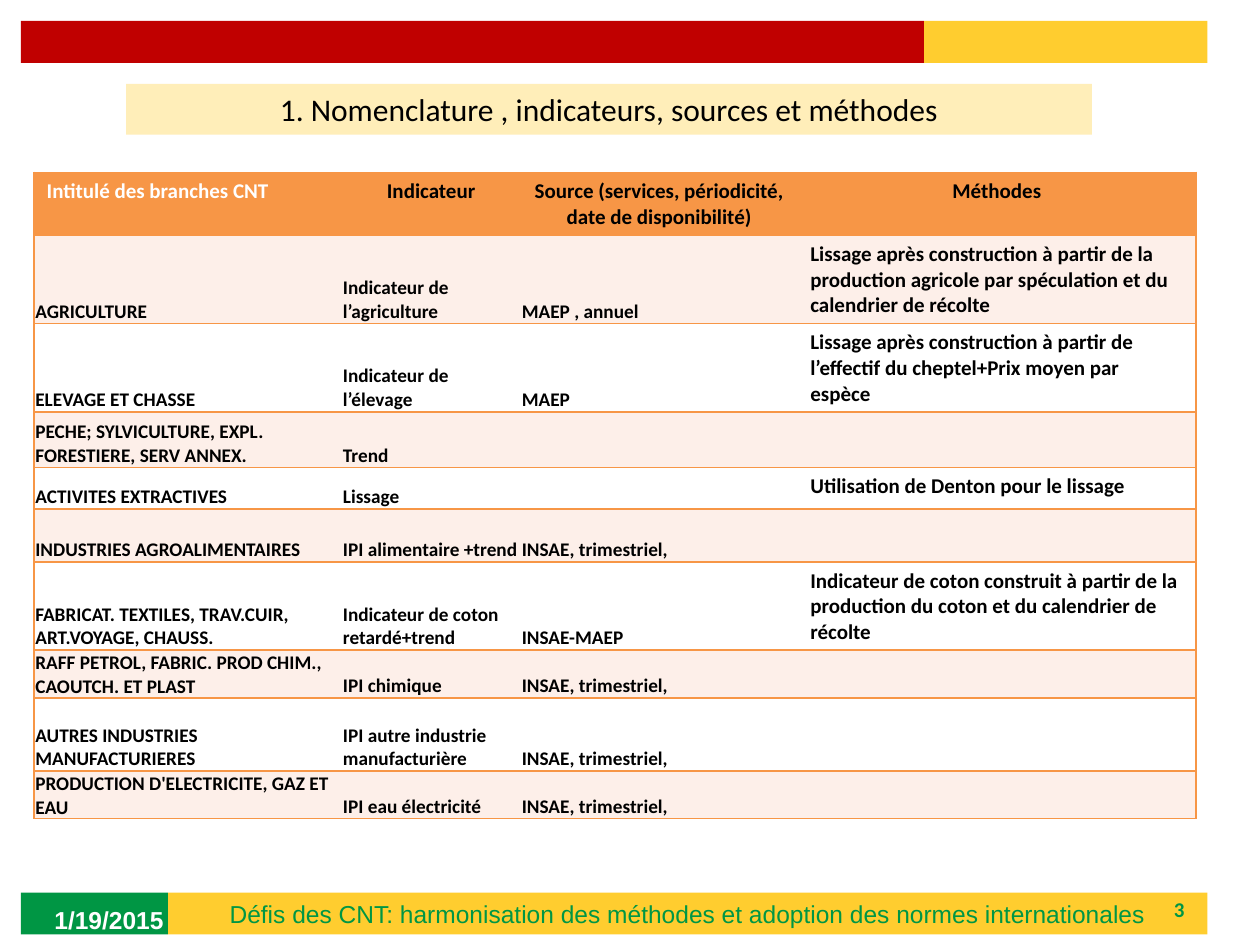
from lxml import etree
from pptx import Presentation
from pptx.dml.color import RGBColor
from pptx.enum.shapes import MSO_SHAPE
from pptx.enum.text import MSO_ANCHOR, PP_ALIGN
from pptx.oxml.ns import qn
from pptx.util import Pt

RECT = MSO_SHAPE.RECTANGLE
LEFT, MID, RIGHT = PP_ALIGN.LEFT, PP_ALIGN.CENTER, PP_ALIGN.RIGHT
TOP, CENTER, BASE = MSO_ANCHOR.TOP, MSO_ANCHOR.MIDDLE, MSO_ANCHOR.BOTTOM
PLAIN = "{2D5ABB26-0587-4C30-8999-92F81FD0307C}"

COLORS = {
    "green": "009644", "gold": "FFCD2F", "red": "C00000", "cream": "FFEEB9",
    "orange": "F79646", "pink": "FDEFE9", "white": "FFFFFF", "black": "000000",
}
TITLE = "1. Nomenclature , indicateurs, sources et méthodes"
MOTTO = "Défis des CNT: harmonisation des méthodes et adoption des normes internationales"
DATE = "1/19/2015"
PAGE = "3"
BARS = [
    ("green", 12, 510, 84, 24),
    ("gold", 96, 510, 594, 24),
    ("red", 12, 12, 516, 24),
    ("gold", 528, 12, 162, 24),
]
HEAD = [
    "Intitulé des branches CNT",
    "Indicateur",
    "Source (services, périodicité, date de disponibilité)",
    "Méthodes",
]
BODY = [
    ("AGRICULTURE", "Indicateur de l’agriculture", "MAEP , annuel",
     "Lissage après construction à partir de la production agricole par spéculation et du calendrier de récolte"),
    ("ELEVAGE ET CHASSE", "Indicateur de l’élevage", "MAEP",
     "Lissage après construction à partir de l’effectif du cheptel+Prix moyen par espèce"),
    ("PECHE; SYLVICULTURE, EXPL. FORESTIERE, SERV ANNEX.", "Trend", "", ""),
    ("ACTIVITES EXTRACTIVES", "Lissage", "", "Utilisation de Denton pour le lissage"),
    ("INDUSTRIES AGROALIMENTAIRES", "IPI alimentaire +trend", "INSAE, trimestriel,", ""),
    ("FABRICAT. TEXTILES, TRAV.CUIR, ART.VOYAGE, CHAUSS.",
     "Indicateur de coton retardé+trend", "INSAE-MAEP",
     "Indicateur de coton construit à partir de la production du coton et du calendrier de récolte"),
    ("RAFF PETROL, FABRIC. PROD CHIM., CAOUTCH. ET PLAST",
     "IPI chimique", "INSAE, trimestriel,", ""),
    ("AUTRES INDUSTRIES MANUFACTURIERES",
     "IPI autre industrie manufacturière", "INSAE, trimestriel,", ""),
    ("PRODUCTION D'ELECTRICITE, GAZ ET EAU",
     "IPI eau électricité", "INSAE, trimestriel,", ""),
]
WIDTHS = [175.8, 102.2, 158.4, 227.5]
HEIGHTS = [28.8, 23.8, 19.4, 31.7, 23.8, 30.2, 41.8, 27.4, 41.8, 25.9]


def rgb(name):
    return RGBColor.from_string(COLORS[name])


def paint(item, name):
    item.fill.solid()
    item.fill.fore_color.rgb = rgb(name)


def write(frame, text, size, face, color, align=LEFT, bold=False):
    frame.word_wrap = True
    para = frame.paragraphs[0]
    para.text = text
    para.alignment = align
    font = para.font
    font.size, font.name, font.bold = Pt(size), face, bold
    font.color.rgb = rgb(color)


def label(slide, box, *style):
    frame = slide.shapes.add_textbox(*map(Pt, box)).text_frame
    frame.vertical_anchor = CENTER
    write(frame, *style)


def edge(cell, sides):
    props = cell._tc.get_or_add_tcPr()
    for side in sides:
        line = etree.SubElement(props, qn("a:ln" + side), w=str(Pt(1)))
        fill = etree.SubElement(line, qn("a:solidFill"))
        etree.SubElement(fill, qn("a:srgbClr"), val=COLORS["orange"])


def fill_cell(cell, row, col, text):
    last = len(WIDTHS) - 1
    edge(cell, ("L" if col == 0 else "") + ("R" if col == last else "") + "TB")
    paint(cell, "orange" if row == 0 else "pink" if row % 2 else "white")
    roomy = row == 0 or (col == last and text)
    pads = (7.2, 3.6, 7.2, 3.6) if roomy else (0.7, 0.7, 0.7, 0)
    cell.margin_left, cell.margin_top, cell.margin_right, cell.margin_bottom = map(Pt, pads)
    cell.vertical_anchor = TOP if roomy else BASE
    write(cell.text_frame, text, 12 if roomy else 11, "Calibri",
          "white" if row == col == 0 else "black",
          MID if row == 0 and col else LEFT, True)


def add_grid(slide):
    rows = [HEAD] + BODY
    frame = slide.shapes.add_table(len(rows), len(WIDTHS), Pt(19.5), Pt(98.5),
                                   Pt(sum(WIDTHS)), Pt(sum(HEIGHTS)))
    grid = frame.table
    grid.horz_banding = False
    next(frame._element.iter(qn("a:tableStyleId"))).text = PLAIN
    for col, width in zip(grid.columns, WIDTHS):
        col.width = Pt(width)
    for line, height in zip(grid.rows, HEIGHTS):
        line.height = Pt(height)
    for row, texts in enumerate(rows):
        for col, text in enumerate(texts):
            fill_cell(grid.cell(row, col), row, col, text)
    frame.height = Pt(369.5)


def main():
    deck = Presentation()
    deck.slide_width, deck.slide_height = Pt(720), Pt(540)
    slide = deck.slides.add_slide(deck.slide_layouts[5])

    for color, *box in BARS:
        bar = slide.shapes.add_shape(RECT, *map(Pt, box))
        bar.shadow.inherit = False
        paint(bar, color)
        bar.line.fill.background()

    label(slide, (96, 510, 594, 24), MOTTO, 14, "Arial", "green", MID)
    label(slide, (516, 510, 168, 19.5), PAGE, 12, "Calibri", "green", RIGHT, True)
    label(slide, (24, 511.5, 168, 28.5), DATE, 14, "Arial", "white", LEFT, True)

    title = slide.shapes.title
    title.left, title.top, title.width, title.height = map(Pt, (72, 48, 552, 29))
    paint(title, "cream")
    title.text_frame.vertical_anchor = TOP
    write(title.text_frame, TITLE, 18, "Calibri", "black", MID)

    add_grid(slide)
    deck.save("out.pptx")


if __name__ == "__main__":
    main()
